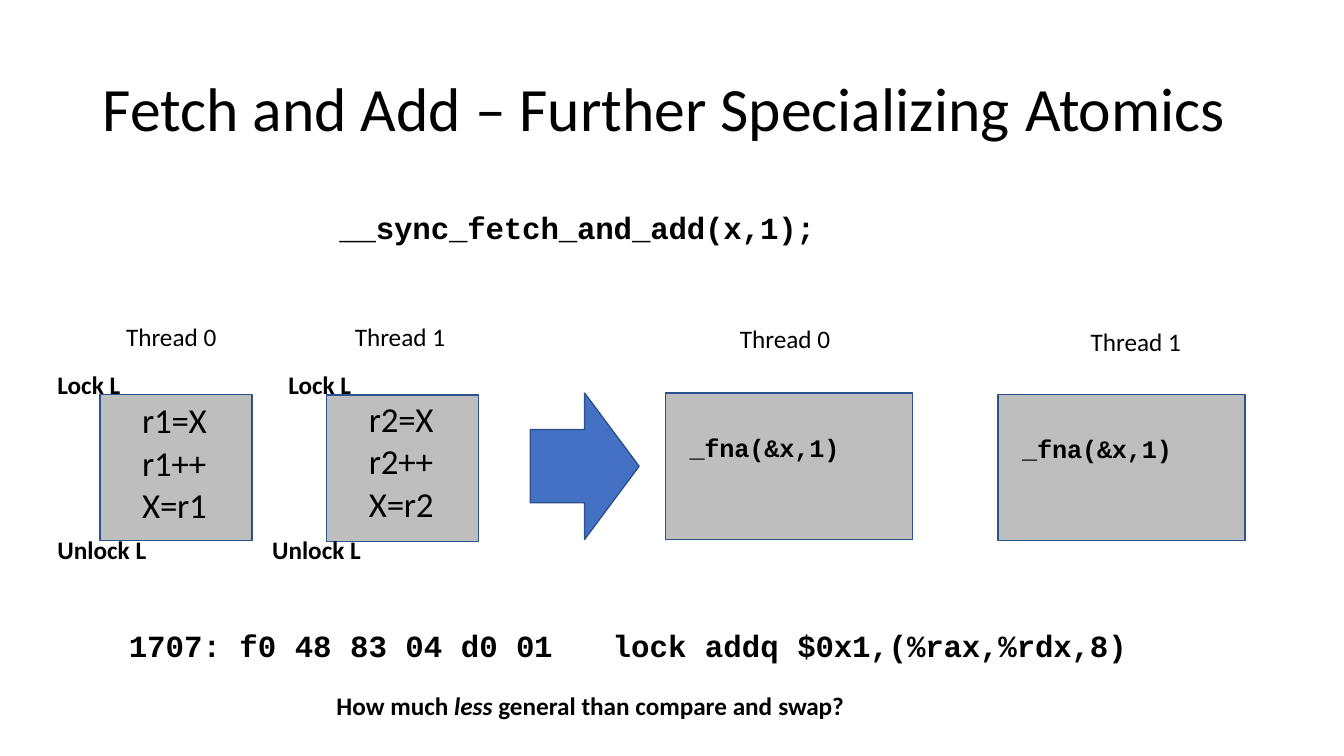
"""Build the slide that compares locked increments with fetch and add."""
import pptx
import pptx.dml.color
import pptx.enum.shapes
import pptx.enum.text
import pptx.util
from lxml import etree

W, H = 13.33, 7.5
COLORS = {"text": "000000", "panel": "BEBEBE", "edge": "2E528F", "arrow": "4471C4"}
STYLES = {
    "title": ("Calibri", 44, False),
    "label": ("Calibri", 18, False),
    "strong": ("Calibri", 18, True),
    "steps": ("Calibri", 25, False),
    "call": ("Courier New", 18, True),
    "code": ("Courier New", 22, True),
}

# Positions and sizes are percentages of the slide's width and height.
TITLE = [("Fetch and Add – Further Specializing ", 0), ("Atomics", -10)]
CODE = [("__sync_fetch_and_add(x,1);", -10)]
ASSEMBLY = [("1707: f0 48 83 04 d0", 0), (" 01", -20), ("\tlock addq ", 0),
            ("$0x1,(%rax,%rdx,8)", -10)]
QUESTION = [("How much ", 0), ("less ", 0, True), ("general than compare and ", 0),
            ("swap?", -10)]
LABELS = [
    ("Thread ", "0", "label", 9.38, 42.3),
    ("Thread ", "1", "label", 26.4, 42.3),
    ("Thread ", "0", "label", 55.05, 42.55),
    ("Thread ", "1", "label", 81.15, 42.95),
    ("Lock ", "L", "strong", 4.28, 48.6),
    ("Unlock ", "L", "strong", 4.28, 70.45),
    ("Lock ", "L", "strong", 21.45, 48.6),
    ("Unlock ", "L", "strong", 20.25, 70.45),
]
PANEL_H = 19.35
LOCKED_PANELS = [
    (7.43, 52.15, ["r1=X", "r1++", "X=r1"], 0.04),
    (24.3, 52.25, ["r2=X", "r2++", "X=r2"], 0.02),
]
ATOMIC_PANELS = [(49.5, 52.0), (74.25, 52.15)]


def rgb(name):
    return pptx.dml.color.RGBColor.from_string(COLORS[name])


def place(x, y, w, h):
    return [pptx.util.Inches(share * side / 100)
            for share, side in ((x, W), (y, H), (w, W), (h, H))]


def set_frame(sp, left=0, top=0.02):
    tf = sp.text_frame
    tf.word_wrap = True
    tf.vertical_anchor = pptx.enum.text.MSO_ANCHOR.TOP
    tf.margin_left, tf.margin_top = pptx.util.Inches(left), pptx.util.Inches(top)
    tf.margin_right = tf.margin_bottom = 0
    return tf


def add_runs(p, runs, style):
    font, size, bold = STYLES[style]
    p.alignment = pptx.enum.text.PP_ALIGN.LEFT
    for text, spacing, *italic in runs:
        r = p.add_run()
        r.text = text
        r.font.name, r.font.size, r.font.bold = font, pptx.util.Pt(size), bold
        r.font.italic = bool(italic)
        r.font.color.rgb = rgb("text")
        r.font._element.set("spc", str(spacing))


def add_text(s, box, runs, style, left=0, top=0.02):
    tf = set_frame(s.shapes.add_textbox(*place(*box)), left, top)
    add_runs(tf.paragraphs[0], runs, style)
    return tf


def add_block(s, kind, box, fill):
    sp = s.shapes.add_shape(kind, *place(*box))
    sp.shadow.inherit = False
    sp.fill.solid()
    sp.fill.fore_color.rgb = rgb(fill)
    sp.line.color.rgb = rgb("edge")
    sp.line.width = pptx.util.Pt(1)
    return sp


def main():
    prs = pptx.Presentation()
    prs.slide_width, prs.slide_height = pptx.util.Inches(W), pptx.util.Inches(H)
    s = prs.slides.add_slide(prs.slide_layouts[6])
    shape = pptx.enum.shapes.MSO_SHAPE

    add_text(s, (1.2, 1.5, 97.7, 22.4), TITLE, "title", 0.86, 0.58)
    for x, y, steps, top in LOCKED_PANELS:
        sp = add_block(s, shape.RECTANGLE, (x, y, 11.33, PANEL_H), "panel")
        tf = set_frame(sp, 0.42, top)
        for i, step in enumerate(steps):
            p = tf.add_paragraph() if i else tf.paragraphs[0]
            p.line_spacing = 1.01
            add_runs(p, [(step, -20)], "steps")
    for x, y in ATOMIC_PANELS:
        sp = add_block(s, shape.RECTANGLE, (x, y, 18.38, PANEL_H), "panel")
        tf = set_frame(sp, 0.24, 0.39)
        add_runs(tf.paragraphs[0], [("_fna(&x,1)", -10)], "call")
    add_block(s, shape.RIGHT_ARROW, (39.45, 52, 8.1, PANEL_H), "arrow")

    for word, mark, style, x, y in LABELS:
        add_text(s, (x, y, 7.2, 4.4), [(word, 0), (mark, -50)], style)
    add_text(s, (25.25, 27.4, 36.5, 5.2), CODE, "code")

    tf = add_text(s, (9.58, 82.7, 75.5, 12.8), ASSEMBLY, "code")
    ns = "{http://schemas.openxmlformats.org/drawingml/2006/main}"
    tabs = etree.SubElement(tf.paragraphs[0]._p.get_or_add_pPr(), ns + "tabLst")
    etree.SubElement(tabs, ns + "tab", pos=str(pptx.util.Inches(4.8)), algn="l")
    p = tf.add_paragraph()
    p.space_before = pptx.util.Pt(19)
    p._p.get_or_add_pPr().set("marL", str(pptx.util.Inches(2.06)))
    add_runs(p, QUESTION, "strong")
    prs.save("out.pptx")


if __name__ == "__main__":
    main()
